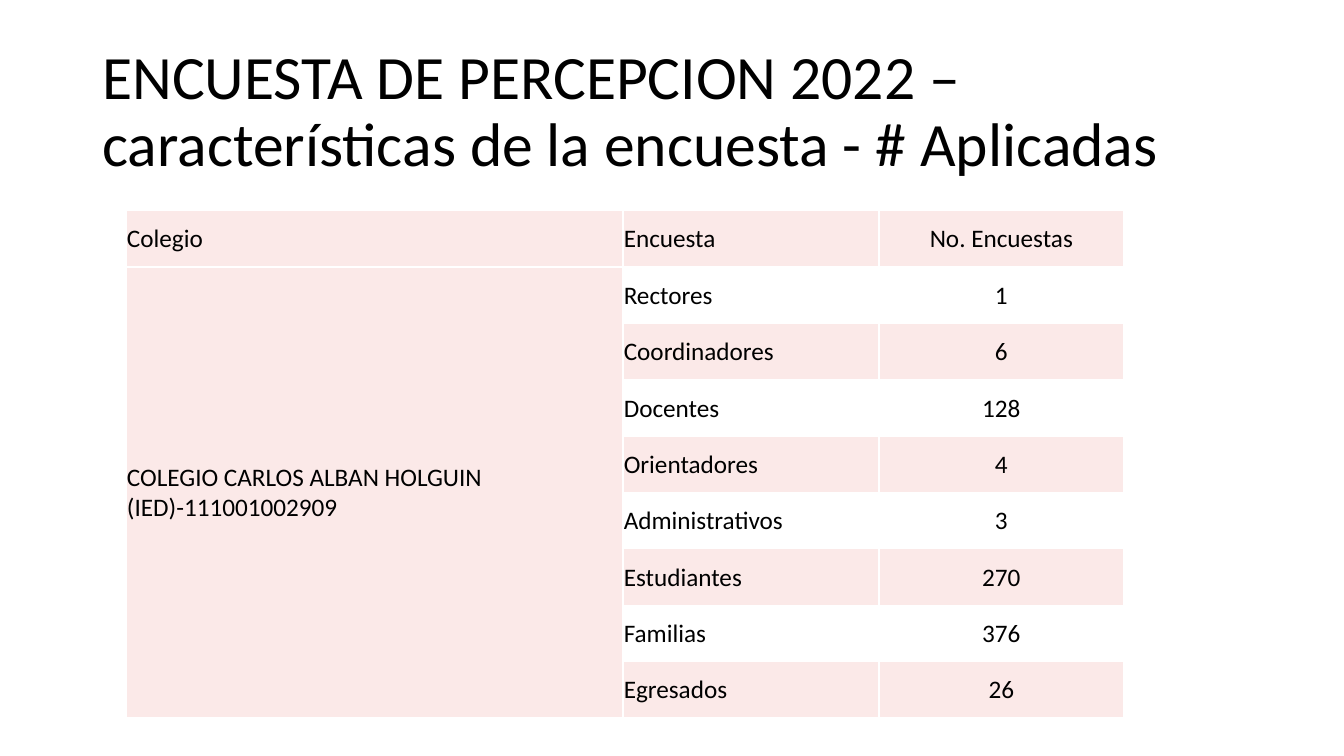
from lxml import etree
from pptx import Presentation
from pptx import util as u
from pptx.dml.color import RGBColor
from pptx.enum import text
from pptx.oxml import ns

TITLE = "ENCUESTA DE PERCEPCION 2022 – características de la encuesta - # Aplicadas"
HEADINGS = ("Colegio", "Encuesta", "No. Encuestas")
SCHOOL = "COLEGIO CARLOS ALBAN HOLGUIN (IED)-111001002909"
SURVEYS = [
    ("Rectores", 1),
    ("Coordinadores", 6),
    ("Docentes", 128),
    ("Orientadores", 4),
    ("Administrativos", 3),
    ("Estudiantes", 270),
    ("Familias", 376),
    ("Egresados", 26),
]
COLORS = {"text": "000000", "band": "FBE9E8", "border": "FFFFFF"}
FONT = "Calibri"
COLUMN_WIDTHS = (12.52, 6.45, 6.17)
ROW_HEIGHT = 1.42
CELL_INSET = u.Cm(0.02)


def format_text(frame, size, align=text.PP_ALIGN.LEFT):
    frame.word_wrap = True
    frame.vertical_anchor = text.MSO_ANCHOR.MIDDLE
    for paragraph in frame.paragraphs:
        paragraph.alignment = align
        for run in paragraph.runs:
            run.font.name = FONT
            run.font.size = u.Pt(size)
            run.font.bold = False
            run.font.color.rgb = RGBColor.from_string(COLORS["text"])


def add_borders(cell):
    """Draw a thin line on all four sides; lines must precede the cell fill."""
    properties = cell._tc.get_or_add_tcPr()
    for position, side in enumerate(("lnL", "lnR", "lnT", "lnB")):
        line = etree.Element(ns.qn(f"a:{side}"), w=str(u.Pt(1)))
        fill = etree.SubElement(line, ns.qn("a:solidFill"))
        etree.SubElement(fill, ns.qn("a:srgbClr"), val=COLORS["border"])
        properties.insert(position, line)


def add_title(slide):
    title = slide.shapes.add_textbox(u.Cm(2.33), u.Cm(1.01), u.Cm(29.21), u.Cm(3.68))
    title.text_frame.text = TITLE
    format_text(title.text_frame, 44)
    title.text_frame.paragraphs[0].line_spacing = 0.9


def add_survey_table(slide):
    rows = [HEADINGS] + [("", name, str(count)) for name, count in SURVEYS]
    table = slide.shapes.add_table(
        len(rows), len(HEADINGS), u.Cm(3.18), u.Cm(5.31),
        u.Cm(sum(COLUMN_WIDTHS)), u.Cm(ROW_HEIGHT * len(rows)),
    ).table
    for column, width in zip(table.columns, COLUMN_WIDTHS):
        column.width = u.Cm(width)
    for row in table.rows:
        row.height = u.Cm(ROW_HEIGHT)

    table.cell(1, 0).merge(table.cell(len(SURVEYS), 0))
    for r, values in enumerate(rows):
        for c, value in enumerate(values):
            cell = table.cell(r, c)
            cell.text = SCHOOL if (r, c) == (1, 0) else value
            cell.margin_left = cell.margin_top = cell.margin_right = CELL_INSET
            cell.margin_bottom = 0
            cell.vertical_anchor = text.MSO_ANCHOR.MIDDLE
            align = text.PP_ALIGN.CENTER if c == 2 else text.PP_ALIGN.LEFT
            format_text(cell.text_frame, 18, align)
            if c == 0 or r % 2 == 0:
                cell.fill.solid()
                cell.fill.fore_color.rgb = RGBColor.from_string(COLORS["band"])
            else:
                cell.fill.background()
            add_borders(cell)


def main():
    deck = Presentation()
    deck.slide_width, deck.slide_height = u.Cm(33.87), u.Cm(19.05)
    slide = deck.slides.add_slide(deck.slide_layouts[6])
    add_title(slide)
    add_survey_table(slide)
    deck.save("out.pptx")


if __name__ == "__main__":
    main()
